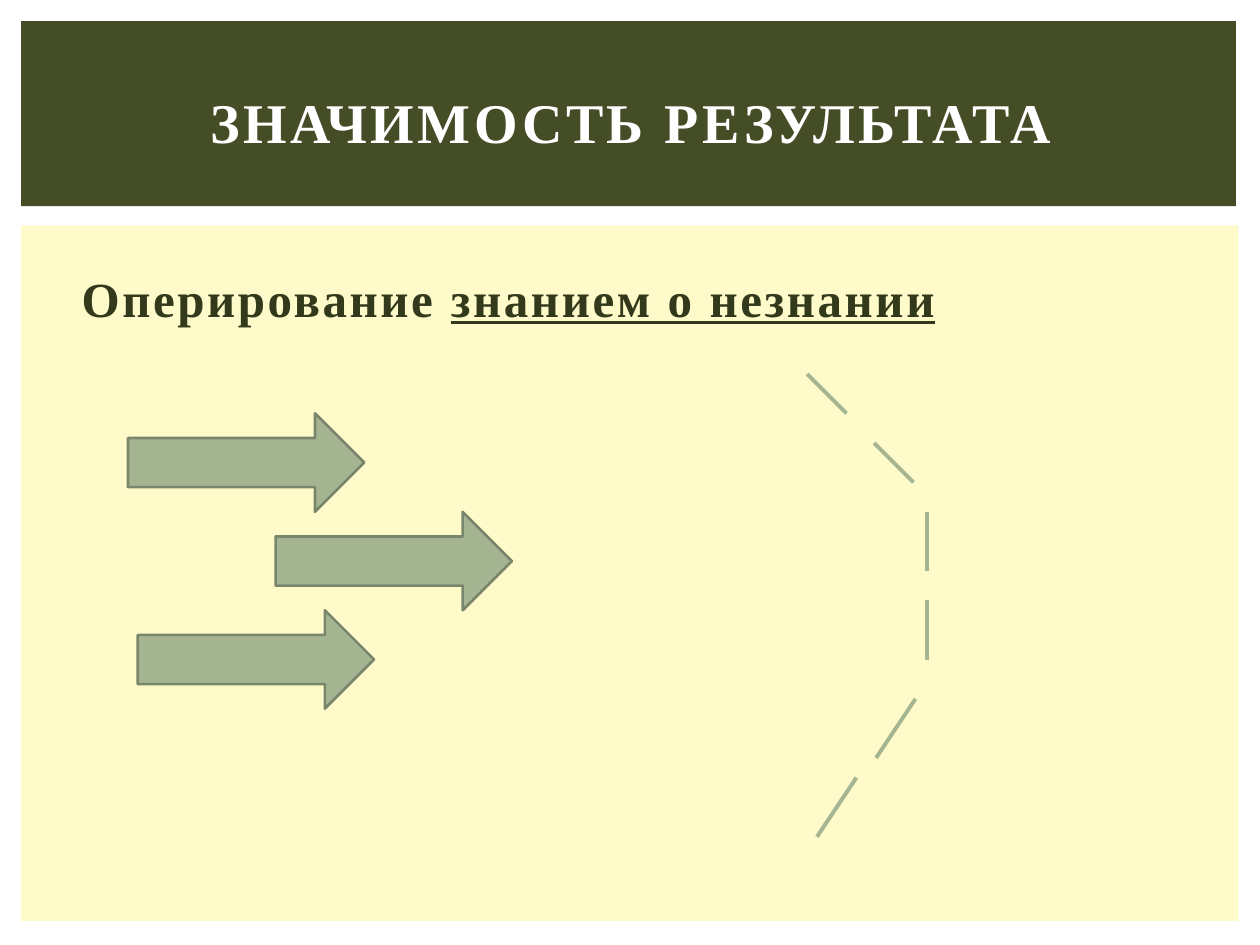
from lxml import etree
from pptx import Presentation
from pptx.dml.color import RGBColor
from pptx.enum.shapes import MSO_CONNECTOR, MSO_SHAPE
from pptx.enum.text import MSO_ANCHOR, PP_ALIGN
from pptx.oxml.ns import qn
from pptx.util import Inches, Pt

RECTANGLE, RIGHT_ARROW = MSO_SHAPE.RECTANGLE, MSO_SHAPE.RIGHT_ARROW
STRAIGHT = MSO_CONNECTOR.STRAIGHT
TOP, MIDDLE = MSO_ANCHOR.TOP, MSO_ANCHOR.MIDDLE
LEFT, CENTER = PP_ALIGN.LEFT, PP_ALIGN.CENTER

WHITE = RGBColor(0xFF, 0xFF, 0xFF)
CREAM = RGBColor(0xFE, 0xFA, 0xC9)
OLIVE = RGBColor(0x44, 0x4D, 0x26)
DARK_OLIVE = RGBColor(0x33, 0x3A, 0x1C)
SAGE = RGBColor(0xA5, 0xB5, 0x92)
SAGE_EDGE = RGBColor(0x7A, 0x86, 0x6C)

FONT = "Times New Roman"
WIDTH, HEIGHT = Inches(10), Inches(7.5)
COLUMNS = 128  # square cells, so the slide has 96 rows
CELL = WIDTH / COLUMNS

ARROW_SIZE = (24, 10)
ARROW_STARTS = [(13, 42), (14, 62), (28, 52)]
# Each pair of equal dashes: first start, run of a dash, step to the second dash
DASH_PAIRS = [
    ((82, 38), (4, 4), (6.8, 7)),
    ((94.2, 52), (0, 6), (0, 9)),
    ((93, 71), (-4, 6), (-6, 8)),
]


def cells(*counts):
    """Turn counts of grid cells into lengths."""
    return [round(count * CELL) for count in counts]


def add_block(slide, kind, box, fill, edge=None):
    shape = slide.shapes.add_shape(kind, *cells(*box))
    shape.shadow.inherit = False
    shape.fill.solid()
    shape.fill.fore_color.rgb = fill
    if edge is None:
        shape.line.fill.background()
    else:
        shape.line.color.rgb = edge
        shape.line.width = Pt(1.5)


def add_dash(slide, start, run):
    end = (start[0] + run[0], start[1] + run[1])
    connector = slide.shapes.add_connector(STRAIGHT, *cells(*start, *end))
    connector.line.color.rgb = SAGE
    connector.line.width = Pt(2.25)
    etree.SubElement(connector._element.spPr, qn("a:effectLst"))


def add_text(slide, box, parts, *, size, color, spacing,
             align=LEFT, anchor=TOP, indent=0, before=0):
    """Add one bold paragraph; parts are (text, underlined) pairs."""
    frame = slide.shapes.add_textbox(*cells(*box)).text_frame
    frame.word_wrap = True
    frame.vertical_anchor = anchor
    paragraph = frame.paragraphs[0]
    paragraph.alignment = align
    paragraph.space_before = Pt(before)
    paragraph._p.get_or_add_pPr().set("marL", str(Inches(indent)))
    for text, underlined in parts:
        run = paragraph.add_run()
        run.text = text
        font = run.font
        font.name, font.size, font.bold = FONT, Pt(size), True
        font.color.rgb = color
        font.underline = underlined
        run._r.get_or_add_rPr().set("spc", str(round(spacing * 100)))


def main():
    presentation = Presentation()
    presentation.slide_width, presentation.slide_height = WIDTH, HEIGHT
    slide = presentation.slides.add_slide(presentation.slide_layouts[6])

    add_block(slide, RECTANGLE, (2.15, 22.9, 123.65, 70.65), CREAM)
    add_block(slide, RECTANGLE, (2.15, 2.15, 123.4, 18.8), OLIVE)
    add_text(slide, (5.4, 5, 117.4, 14.7), [("ЗНАЧИМОСТЬ РЕЗУЛЬТАТА", False)],
             size=32, color=WHITE, spacing=2, align=CENTER, anchor=MIDDLE)
    add_text(slide, (6.4, 26.6, 115.2, 63.4),
             [("Оперирование ", False), ("знанием о незнании", True)],
             size=28, color=DARK_OLIVE, spacing=1.5, indent=0.05, before=4)

    for start in ARROW_STARTS:
        add_block(slide, RIGHT_ARROW, start + ARROW_SIZE, SAGE, SAGE_EDGE)
    for start, run, step in DASH_PAIRS:
        add_dash(slide, start, run)
        add_dash(slide, (start[0] + step[0], start[1] + step[1]), run)

    presentation.save("out.pptx")


if __name__ == "__main__":
    main()
